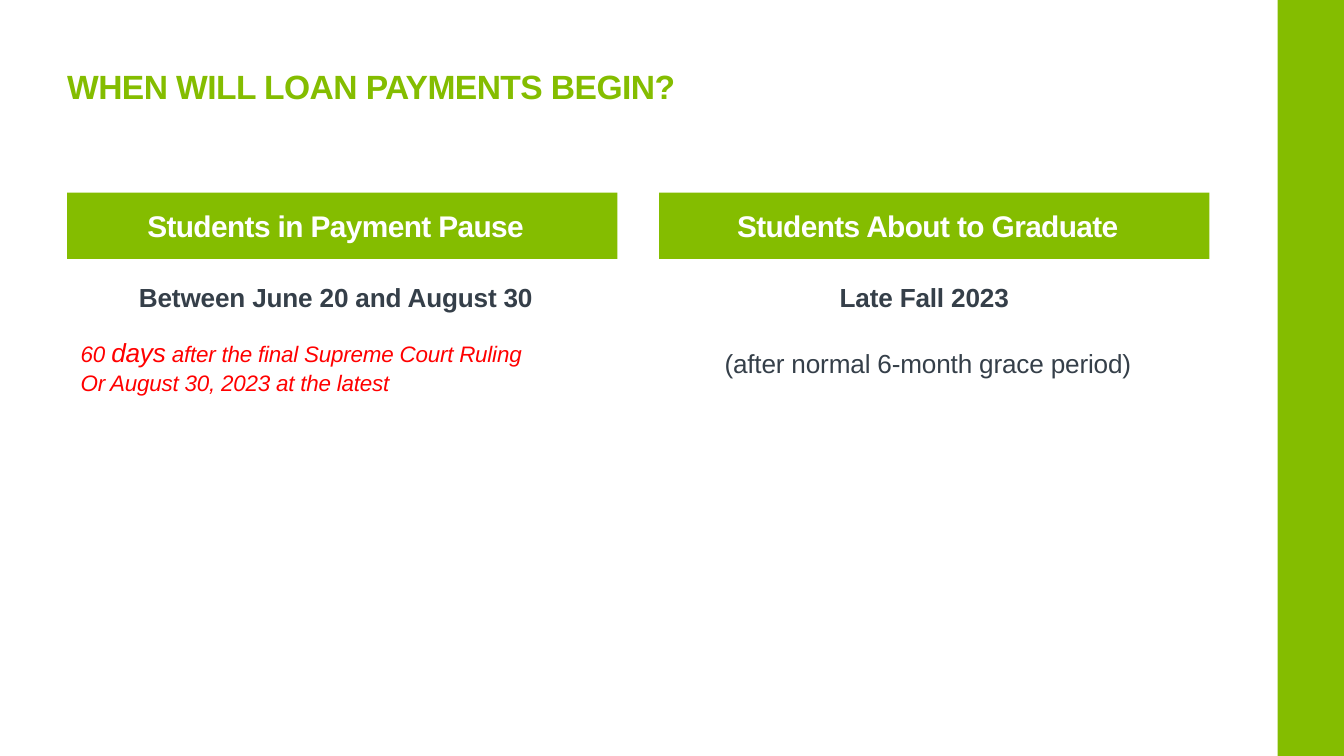
from pptx import Presentation
from pptx.dml.color import RGBColor
from pptx.enum.shapes import MSO_SHAPE
from pptx.enum.text import MSO_ANCHOR, PP_ALIGN
from pptx.util import Pt

GREEN = RGBColor(0x84, 0xBD, 0x00)
WHITE = RGBColor(0xFF, 0xFF, 0xFF)
SLATE = RGBColor(0x35, 0x3F, 0x49)
RED = RGBColor(0xFF, 0x00, 0x00)

PAGE_WIDTH, PAGE_HEIGHT = 720, 405
MARGIN, CONTENT_WIDTH, COLUMN_GAP = 36, 612, 22.4
HEADER_HEIGHT, BODY_OFFSET, BODY_HEIGHT = 35.5, 43, 216

# Font formats; tracking is in hundredths of a point
TITLE = dict(size=Pt(18), bold=True, color=GREEN, tracking=-30)
HEADER = dict(size=Pt(16), bold=True, color=WHITE, tracking=-30)
DATE = dict(size=Pt(14), bold=True, color=SLATE, tracking=-10)
DETAIL = DATE | dict(bold=False)
NOTE = dict(size=Pt(12), italic=True, color=RED, tracking=-10)
NOTE_LARGE = NOTE | dict(size=Pt(14))

# Paragraph formats
LEFT = dict(alignment=PP_ALIGN.LEFT)
CENTERED = dict(alignment=PP_ALIGN.CENTER)
FIRST = dict(alignment=PP_ALIGN.CENTER, space_after=Pt(12), line_spacing=1.05)
FOLLOWING = FIRST | dict(space_before=Pt(6))
INDENTED = dict(alignment=PP_ALIGN.LEFT, level=1, line_spacing=1.05)

# Each column: header, then body paragraphs as (format, spans)
COLUMNS = [
    ("Students in Payment Pause", [
        (FIRST, [("Between June 20 and August 30", DATE)]),
        (INDENTED, [("60 ", NOTE), ("days", NOTE_LARGE),
                    (" after the final Supreme Court Ruling", NOTE)]),
        (INDENTED, [("Or August 30, 2023 at the latest", NOTE)]),
    ]),
    ("Students About to Graduate", [
        (FIRST, [("Late Fall 2023 ", DATE)]),
        (FOLLOWING, [("(after normal 6-month grace period)", DETAIL)]),
    ]),
]


def add_span(para, text, style):
    span = para.add_run()
    span.text = text
    span.font.name = "Arial"
    for name, value in style.items():
        if name == "color":
            span.font.color.rgb = value
        elif name == "tracking":
            span.font._element.set("spc", str(value))
        else:
            setattr(span.font, name, value)


def fill_text(box, paragraphs, anchor):
    frame = box.text_frame
    settings = dict(word_wrap=True, vertical_anchor=anchor, margin_left=0,
                    margin_right=Pt(7.2), margin_top=Pt(3.6), margin_bottom=Pt(3.6))
    for name, value in settings.items():
        setattr(frame, name, value)
    for index, (layout, spans) in enumerate(paragraphs):
        para = frame.add_paragraph() if index else frame.paragraphs[0]
        for name, value in layout.items():
            setattr(para, name, value)
        if layout.get("level"):
            para._p.get_or_add_pPr().set("marL", str(Pt(7.2)))
        for text, style in spans:
            add_span(para, text, style)


def add_text(page, left, top, width, height, paragraphs, anchor=MSO_ANCHOR.TOP):
    box = page.shapes.add_textbox(Pt(left), Pt(top), Pt(width), Pt(height))
    fill_text(box, paragraphs, anchor)


def add_bar(page, left, top, width, height):
    bar = page.shapes.add_shape(MSO_SHAPE.RECTANGLE, Pt(left), Pt(top), Pt(width), Pt(height))
    bar.shadow.inherit = False
    bar.fill.solid()
    bar.fill.fore_color.rgb = GREEN
    bar.line.fill.background()
    return bar


def add_column(page, left, top, width, header, paragraphs):
    # Header bar
    bar = add_bar(page, left, top, width, HEADER_HEIGHT)
    fill_text(bar, [(CENTERED, [(header, HEADER)])], MSO_ANCHOR.MIDDLE)
    # Body text
    add_text(page, left, top + BODY_OFFSET, width, BODY_HEIGHT, paragraphs)


def build_comparison(page, left, top, width):
    column_width = (width - COLUMN_GAP) / len(COLUMNS)
    for index, (header, paragraphs) in enumerate(COLUMNS):
        column_left = left + index * (column_width + COLUMN_GAP)
        add_column(page, column_left, top, column_width, header, paragraphs)


def main():
    deck = Presentation()
    deck.slide_width, deck.slide_height = Pt(PAGE_WIDTH), Pt(PAGE_HEIGHT)
    page = deck.slides.add_slide(deck.slide_layouts[6])
    # Side band
    add_bar(page, 684.5, 0, 35.5, PAGE_HEIGHT)
    # Title
    add_text(page, MARGIN, 3.6, CONTENT_WIDTH, 57,
             [(LEFT, [("WHEN WILL LOAN PAYMENTS BEGIN?", TITLE)])], MSO_ANCHOR.BOTTOM)
    # Two columns
    build_comparison(page, MARGIN, 103.2, CONTENT_WIDTH)
    deck.save("out.pptx")


if __name__ == "__main__":
    main()
